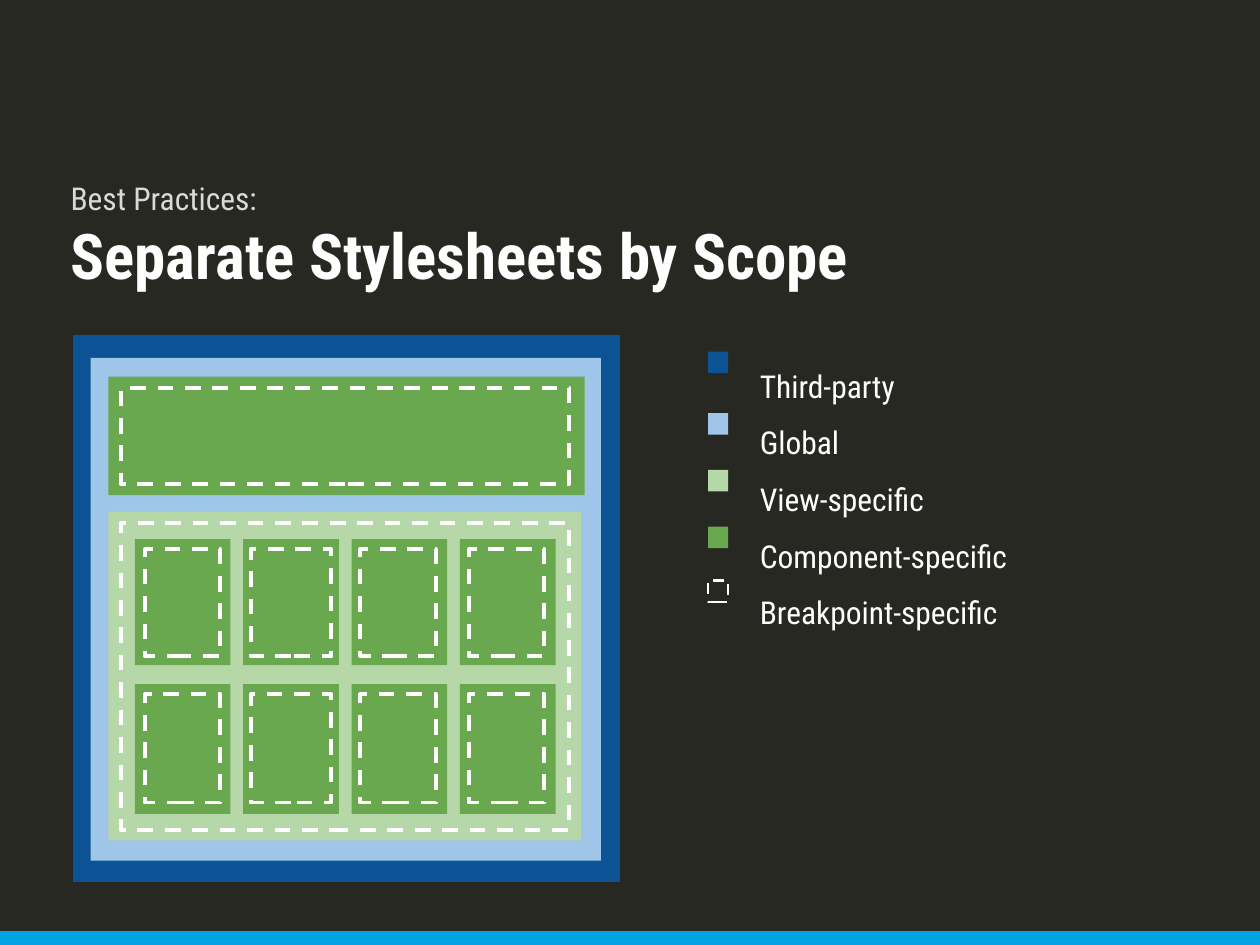
from copy import deepcopy
from dataclasses import dataclass

from lxml import etree
from pptx import Presentation
from pptx import util as u
from pptx.dml.color import RGBColor
from pptx.enum import dml, shapes, text
from pptx.oxml.ns import qn

COLS, ROWS = 100, 75  # slide grid
CELL = u.Inches(0.1)


@dataclass(frozen=True)
class Theme:
    font: str = "Roboto Condensed"
    back: str = "272822"
    bar: str = "00A4E4"
    white: str = "FFFFFF"
    muted: str = "D9D9D9"
    third_party: str = "0B5394"
    general: str = "9FC5E8"
    view: str = "B6D7A8"
    component: str = "6AA84F"
    title_size: int = 36
    text_size: int = 18
    dash_width: float = 2.25
    key_width: float = 1.5


@dataclass(frozen=True)
class Box:
    """Area in grid columns and rows."""
    x: float
    y: float
    w: float
    h: float

    def sub(self, x, y, w, h):
        return Box(self.x + x, self.y + y, w, h)

    def emu(self):
        return [round(v * CELL) for v in (self.x, self.y, self.w, self.h)]


T = Theme()


def rgb(color):
    return RGBColor.from_string(color)


def add_rect(parent, box, color):
    sp = parent.add_shape(shapes.MSO_SHAPE.RECTANGLE, *box.emu())
    sp.shadow.inherit = False
    sp.fill.solid()
    sp.fill.fore_color.rgb = rgb(color)
    sp.line.fill.background()
    return sp


def add_dashed(parent, box, width=T.dash_width):
    sp = add_rect(parent, box, T.white)
    sp.fill.background()
    sp.line.color.rgb = rgb(T.white)
    sp.line.width = u.Pt(width)
    sp.line.dash_style = dml.MSO_LINE.DASH


def place_text(sp, box, anchor):
    sp.left, sp.top, sp.width, sp.height = box.emu()
    tf = sp.text_frame
    fmt = dict.fromkeys(("margin_left", "margin_top", "margin_right", "margin_bottom"), CELL)
    fmt.update(word_wrap=True, auto_size=text.MSO_AUTO_SIZE.NONE, vertical_anchor=anchor)
    for name, value in fmt.items():
        setattr(tf, name, value)
    return tf


def add_run(p, words, size, color, bold=False):
    r = p.add_run()
    r.text = words
    for name, value in dict(name=T.font, size=u.Pt(size), bold=bold).items():
        setattr(r.font, name, value)
    r.font.color.rgb = rgb(color)
    return r


def draw_background(s, box):
    s.background.fill.solid()
    s.background.fill.fore_color.rgb = rgb(T.back)
    add_rect(s.shapes, box.sub(0, 73.9, box.w, 1.1), T.bar)


def draw_title(s, box):
    p = place_text(s.shapes.title, box, text.MSO_ANCHOR.BOTTOM).paragraphs[0]
    p.alignment = text.PP_ALIGN.LEFT
    r = add_run(p, "Best Practices: ", T.text_size, T.muted)
    p.add_line_break()
    p._p[-1].append(deepcopy(r._r.get_or_add_rPr()))  # break keeps the small size
    add_run(p, "Separate Stylesheets by Scope", T.title_size, T.white, True)


def draw_page_diagram(s, box):
    group = s.shapes.add_group_shape().shapes
    # Nested page areas
    add_rect(group, box, T.third_party)
    add_rect(group, box.sub(1.4, 1.8, 40.5, 39.9), T.general)
    header = box.sub(2.8, 3.3, 37.8, 9.4)
    add_rect(group, header, T.component)
    add_dashed(group, header.sub(1, 0.9, 35.6, 7.6))
    view = box.sub(2.8, 14, 37.5, 26.1)
    add_rect(group, view, T.view)
    add_dashed(group, view.sub(1, 0.9, 35.6, 24.4))
    # Component tiles: (top, height, outline height) and (outline inset, width)
    for top, height, dash_h in ((2.2, 10, 8.5), (13.7, 10.3, 8.6)):
        for col, (inset, dash_w) in enumerate(((0.8, 6), (0.6, 6.4), (0.7, 6), (0.7, 6))):
            tile = view.sub(2.1 + 8.6 * col, top, 7.6, height)
            add_rect(group, tile, T.component)
            add_dashed(group, tile.sub(inset, 0.8, dash_w, dash_h))


def draw_legend(s, box):
    items = (
        ("Third-party", T.third_party, 1.3),
        ("Global", T.general, 6.2),
        ("View-specific", T.view, 10.7),
        ("Component-specific", T.component, 15.2),
        ("Breakpoint-specific", None, 19.5),
    )
    tf = place_text(s.placeholders[1], box.sub(3.1, 0, 23.5, box.h), text.MSO_ANCHOR.TOP)
    for i, (label, color, top) in enumerate(items):
        p = tf.add_paragraph() if i else tf.paragraphs[0]
        pPr = p._p.get_or_add_pPr()
        pPr.set("marL", "0")
        pPr.set("indent", "0")
        etree.SubElement(pPr, qn("a:buNone"))
        p.line_spacing = 1.5
        p.space_before = u.Pt(0)
        add_run(p, label, T.text_size, T.white)
        # Colour key
        key = box.sub(0, top, 1.6, 1.7)
        if color:
            add_rect(s.shapes, key, color)
        else:
            add_dashed(s.shapes, key, T.key_width)


def main():
    prs = Presentation()
    prs.slide_width, prs.slide_height = COLS * CELL, ROWS * CELL
    s = prs.slides.add_slide(prs.slide_layouts[1])
    draw_background(s, Box(0, 0, COLS, ROWS))
    draw_title(s, Box(4.6, 14.6, 90.7, 9.6))
    draw_page_diagram(s, Box(5.8, 26.6, 43.4, 43.4))
    draw_legend(s, Box(56.2, 26.6, 26.6, 46))
    prs.save("out.pptx")


if __name__ == "__main__":
    main()
